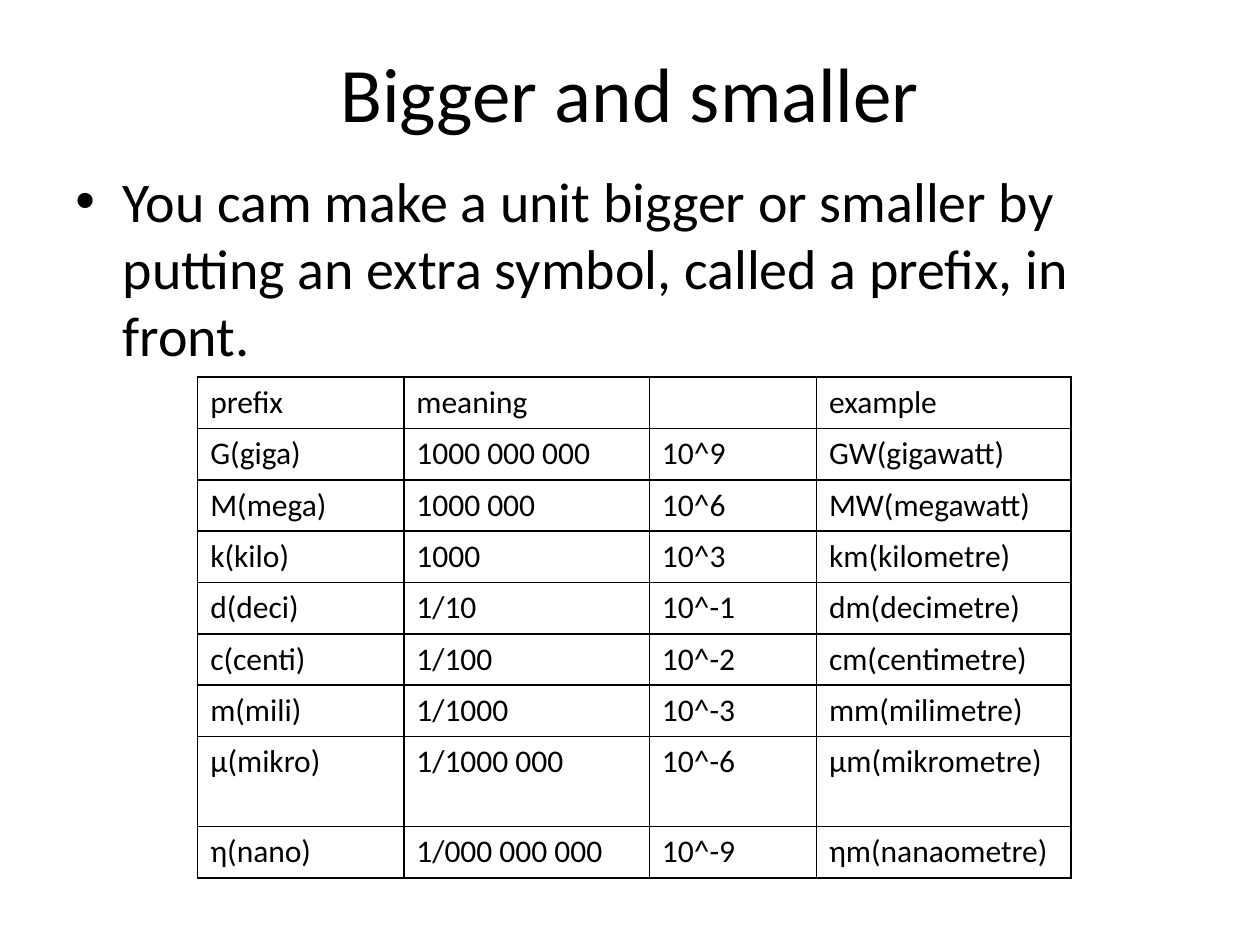
from lxml import etree
from pptx import Presentation
from pptx.dml.color import RGBColor
from pptx.enum import text
from pptx.oxml import ns
from pptx.util import Pt

BLACK = RGBColor(0x00, 0x00, 0x00)
WHITE = RGBColor(0xFF, 0xFF, 0xFF)
LEFT, JUSTIFY, CENTER = (text.PP_ALIGN.LEFT, text.PP_ALIGN.JUSTIFY,
                         text.PP_ALIGN.CENTER)

HEADER = ("prefix", "meaning", "", "example")
PREFIXES = [
    ("G(giga)", "1000 000 000", "10^9", "GW(gigawatt)"),
    ("M(mega)", "1000 000", "10^6", "MW(megawatt)"),
    ("k(kilo)", "1000", "10^3", "km(kilometre)"),
    ("d(deci)", "1/10", "10^-1", "dm(decimetre)"),
    ("c(centi)", "1/100", "10^-2", "cm(centimetre)"),
    ("m(mili)", "1/1000", "10^-3", "mm(milimetre)"),
    ("μ(mikro)", "1/1000 000", "10^-6", "μm(mikrometre)"),
    ("η(nano)", "1/000 000 000", "10^-9", "ηm(nanaometre)"),
]
COL_WIDTHS = (117.8, 140.3, 95.5, 145.4)
ROW_HEIGHT, MIKRO_HEIGHT = 29.35, 51.4
MIKRO_ROW = 7
POWER_COL = 2


def write(tf, words, size=18, font="Calibri", color=BLACK, align=LEFT):
    p = tf.paragraphs[0]
    p.alignment = align
    if words:
        r = p.add_run()
        r.text = words
        r.font.size = Pt(size)
        r.font.name = font
        r.font.color.rgb = color
    return p


def add_border(cell, color=BLACK, width=1):
    tcPr = cell._tc.get_or_add_tcPr()
    for i, side in enumerate(("lnL", "lnR", "lnT", "lnB")):
        ln = etree.Element(ns.qn(f"a:{side}"), w=str(Pt(width)))
        fill = etree.SubElement(ln, ns.qn("a:solidFill"))
        etree.SubElement(fill, ns.qn("a:srgbClr"), val=str(color))
        tcPr.insert(i, ln)


class SlideMaker:
    def __init__(self, prs):
        self.s = prs.slides.add_slide(prs.slide_layouts[5])
        fill = self.s.background.fill
        fill.solid()
        fill.fore_color.rgb = WHITE

    def title(self, words, x, y, w, h):
        sp = self.s.shapes.title
        sp.left, sp.top, sp.width, sp.height = map(Pt, (x, y, w, h))
        sp.text_frame.vertical_anchor = text.MSO_ANCHOR.MIDDLE
        write(sp.text_frame, words, size=44, align=CENTER)

    def bullet(self, words, x, y, w, h, indent=27):
        sp = self.s.shapes.add_textbox(*map(Pt, (x, y, w, h)))
        sp.text_frame.word_wrap = True
        p = write(sp.text_frame, words, size=32)
        p.space_before = Pt(6.4)
        pPr = p._p.get_or_add_pPr()
        pPr.set("marL", str(Pt(indent)))
        pPr.set("indent", str(-Pt(indent)))
        etree.SubElement(pPr, ns.qn("a:buFont"), typeface="Arial")
        etree.SubElement(pPr, ns.qn("a:buChar"), char="•")

    def table(self, rows, x, y, widths, heights):
        frame = self.s.shapes.add_table(
            len(rows), len(widths), Pt(x), Pt(y),
            Pt(sum(widths)), Pt(sum(heights)))
        tbl = frame.table
        tbl.first_row = tbl.horz_banding = False
        for col, width in zip(tbl.columns, widths):
            col.width = Pt(width)
        for i, (row, height) in enumerate(zip(rows, heights)):
            tbl.rows[i].height = Pt(height)
            for j, words in enumerate(row):
                cell = tbl.cell(i, j)
                cell.fill.background()
                add_border(cell)
                justified = i > 0 and j == POWER_COL
                write(cell.text_frame, words,
                      align=JUSTIFY if justified else LEFT)


def main():
    prs = Presentation()
    prs.slide_width, prs.slide_height = Pt(720), Pt(540)
    slide = SlideMaker(prs)

    # Title and explanation
    slide.title("Bigger and smaller", 36, 21.6, 648, 61.2)
    slide.bullet("You cam make a unit bigger or smaller by putting an extra "
                 "symbol, called a prefix, in front.", 36, 91.4, 648, 422.6)

    # Table of prefixes, with one taller row
    rows = [HEADER] + PREFIXES
    heights = [MIKRO_HEIGHT if i == MIKRO_ROW else ROW_HEIGHT
               for i in range(len(rows))]
    slide.table(rows, 113, 215.5, COL_WIDTHS, heights)

    prs.save("out.pptx")


if __name__ == "__main__":
    main()
